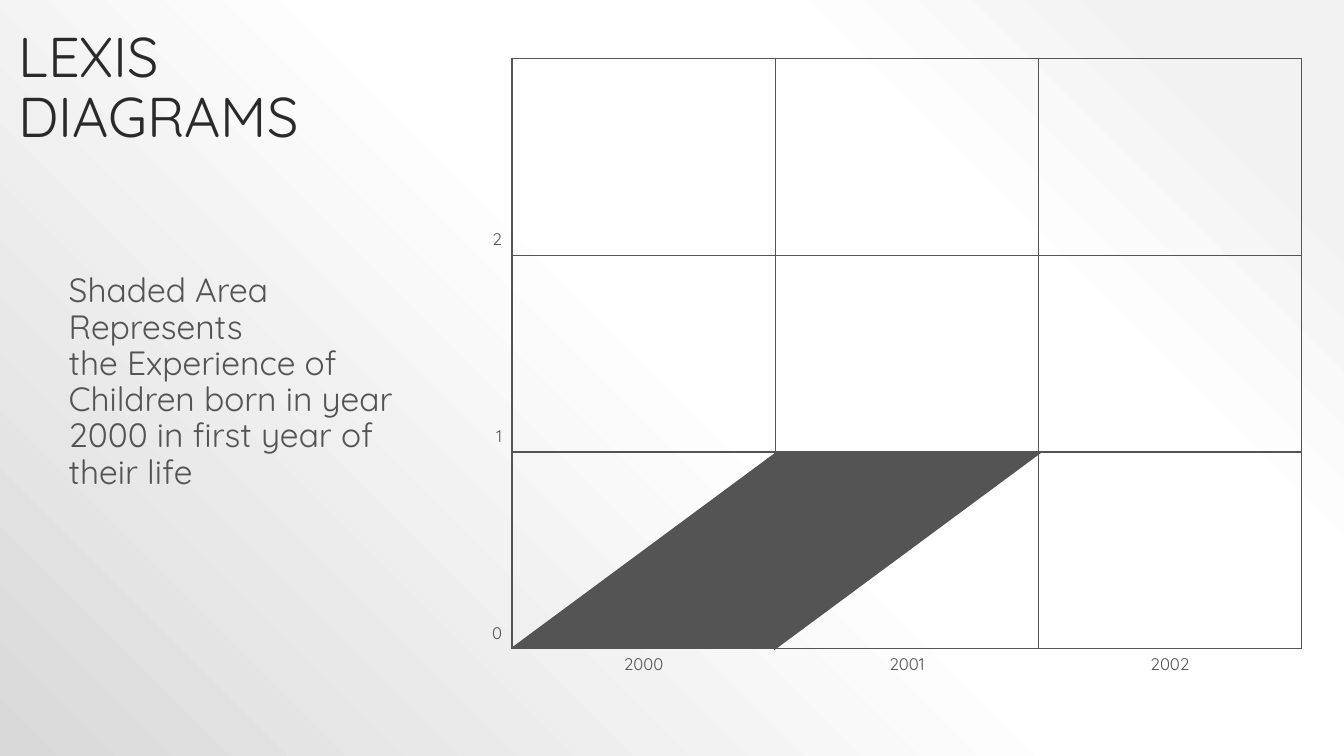
from dataclasses import dataclass

import lxml.etree
import pptx
import pptx.dml.color
import pptx.enum.shapes
import pptx.enum.text
import pptx.oxml.ns
import pptx.util

Pt = pptx.util.Pt
qn = pptx.oxml.ns.qn
Align = pptx.enum.text.PP_ALIGN
Anchor = pptx.enum.text.MSO_ANCHOR


@dataclass(frozen=True)
class Theme:
    font: str = "Quicksand"
    heading: str = "2A2A2A"
    ink: str = "545454"
    backdrop: tuple = ((10, "F2F2F2"), (28, "FFFFFF"), (48, "FFFFFF"), (100, "D9D9D9"))
    title_size: float = 40
    body_size: float = 24
    label_size: float = 12
    border: float = 1
    line_spacing: float = 0.9


@dataclass(frozen=True)
class TextBlock:
    left: float
    top: float
    width: float
    height: float
    paragraphs: tuple
    size: float
    color: str
    anchor: Anchor
    fit: pptx.enum.text.MSO_AUTO_SIZE


@dataclass(frozen=True)
class Triangle:
    left: float
    top: float
    width: float
    height: float
    flip: str


THEME = Theme()
AGES = ("2", "1", "0")
YEARS = ("2000", "2001", "2002")
GRID_LEFT, GRID_TOP = 293.75, 41.6
AGE_WIDTH, YEAR_WIDTH = 72, 188
AGE_HEIGHT, YEAR_HEIGHT = 140.6, 58.2

TEXTS = (
    TextBlock(6, 6, 240, 104.5, (("LEXIS ", "DIAGRAMS"),),
              THEME.title_size, THEME.heading, Anchor.BOTTOM,
              pptx.enum.text.MSO_AUTO_SIZE.NONE),
    TextBlock(42, 192, 270, 164,
              (("Shaded Area Represents",),
               ("the Experience of Children born in year 2000 in first year of their life",)),
              THEME.body_size, THEME.ink, Anchor.TOP,
              pptx.enum.text.MSO_AUTO_SIZE.SHAPE_TO_FIT_TEXT),
)

COHORT = (
    Triangle(553, 322.5, 192, 142, "flipV"),
    Triangle(365, 324, 188, 139, "flipH"),
)


def rgb(color: str) -> pptx.dml.color.RGBColor:
    return pptx.dml.color.RGBColor.from_string(color)


def add_run(paragraph, text: str, size: float, color: str) -> None:
    run = paragraph.add_run()
    run.text = text
    run.font.name = THEME.font
    run.font.size = Pt(size)
    run.font.color.rgb = rgb(color)


def add_color(parent, color: str) -> None:
    lxml.etree.SubElement(parent, qn("a:srgbClr"), val=color)


def paint_background(slide) -> None:
    slide.background.fill.gradient()
    gradient = slide.element.find(".//" + qn("a:gradFill"))
    for child in list(gradient):
        gradient.remove(child)
    stops = lxml.etree.SubElement(gradient, qn("a:gsLst"))
    for position, color in THEME.backdrop:
        add_color(lxml.etree.SubElement(stops, qn("a:gs"), pos=str(position * 1000)), color)
    circle = lxml.etree.SubElement(gradient, qn("a:path"), path="circle")
    lxml.etree.SubElement(circle, qn("a:fillToRect"), l="100000", b="100000")


def draw_text(slide, block: TextBlock) -> None:
    box = slide.shapes.add_textbox(
        Pt(block.left), Pt(block.top), Pt(block.width), Pt(block.height))
    frame = box.text_frame
    frame.word_wrap = True
    frame.auto_size = block.fit
    frame.vertical_anchor = block.anchor
    for index, lines in enumerate(block.paragraphs):
        paragraph = frame.add_paragraph() if index else frame.paragraphs[0]
        paragraph.line_spacing = THEME.line_spacing
        for number, line in enumerate(lines):
            if number:
                paragraph.add_line_break()
            add_run(paragraph, line, block.size, block.color)


def set_borders(cell, sides: dict[str, bool]) -> None:
    properties = cell._tc.get_or_add_tcPr()
    for side, visible in sides.items():
        line = lxml.etree.SubElement(
            properties, qn(f"a:ln{side}"), w=str(Pt(THEME.border)))
        if visible:
            add_color(lxml.etree.SubElement(line, qn("a:solidFill")), THEME.ink)
        else:
            lxml.etree.SubElement(line, qn("a:noFill"))


def write_label(cell, text: str, align: Align, anchor: Anchor) -> None:
    cell.vertical_anchor = anchor
    paragraph = cell.text_frame.paragraphs[0]
    paragraph.alignment = align
    add_run(paragraph, text, THEME.label_size, THEME.ink)


def draw_grid(slide) -> None:
    widths = [AGE_WIDTH] + [YEAR_WIDTH] * len(YEARS)
    heights = [AGE_HEIGHT] * len(AGES) + [YEAR_HEIGHT]
    grid = slide.shapes.add_table(
        len(heights), len(widths), Pt(GRID_LEFT), Pt(GRID_TOP),
        Pt(sum(widths)), Pt(sum(heights))).table
    grid.first_row = False
    grid.horz_banding = False
    for column, width in zip(grid.columns, widths):
        column.width = Pt(width)
    for row, height in zip(grid.rows, heights):
        row.height = Pt(height)
    for row in range(len(heights)):
        for column in range(len(widths)):
            cell = grid.cell(row, column)
            beside_plot, above_years = column > 0, row < len(AGES)
            inside = beside_plot and above_years
            set_borders(cell, {"L": inside, "R": above_years, "T": beside_plot, "B": inside})
            cell.fill.background()
    for row, age in enumerate(AGES):
        write_label(grid.cell(row, 0), age, Align.RIGHT, Anchor.BOTTOM)
    for column, year in enumerate(YEARS, start=1):
        write_label(grid.cell(len(AGES), column), year, Align.CENTER, Anchor.TOP)


def draw_cohort(slide) -> None:
    cohort = slide.shapes.add_group_shape()
    for half in COHORT:
        triangle = cohort.shapes.add_shape(
            pptx.enum.shapes.MSO_SHAPE.RIGHT_TRIANGLE,
            Pt(half.left), Pt(half.top), Pt(half.width), Pt(half.height))
        triangle.shadow.inherit = False
        triangle.fill.solid()
        triangle.fill.fore_color.rgb = rgb(THEME.ink)
        triangle.line.fill.background()
        triangle.element.spPr.find(qn("a:xfrm")).set(half.flip, "1")


def main() -> None:
    deck = pptx.Presentation()
    deck.slide_width, deck.slide_height = Pt(960), Pt(540)
    slide = deck.slides.add_slide(deck.slide_layouts[6])
    paint_background(slide)
    draw_grid(slide)
    for block in TEXTS:
        draw_text(slide, block)
    draw_cohort(slide)
    deck.save("out.pptx")


if __name__ == "__main__":
    main()
